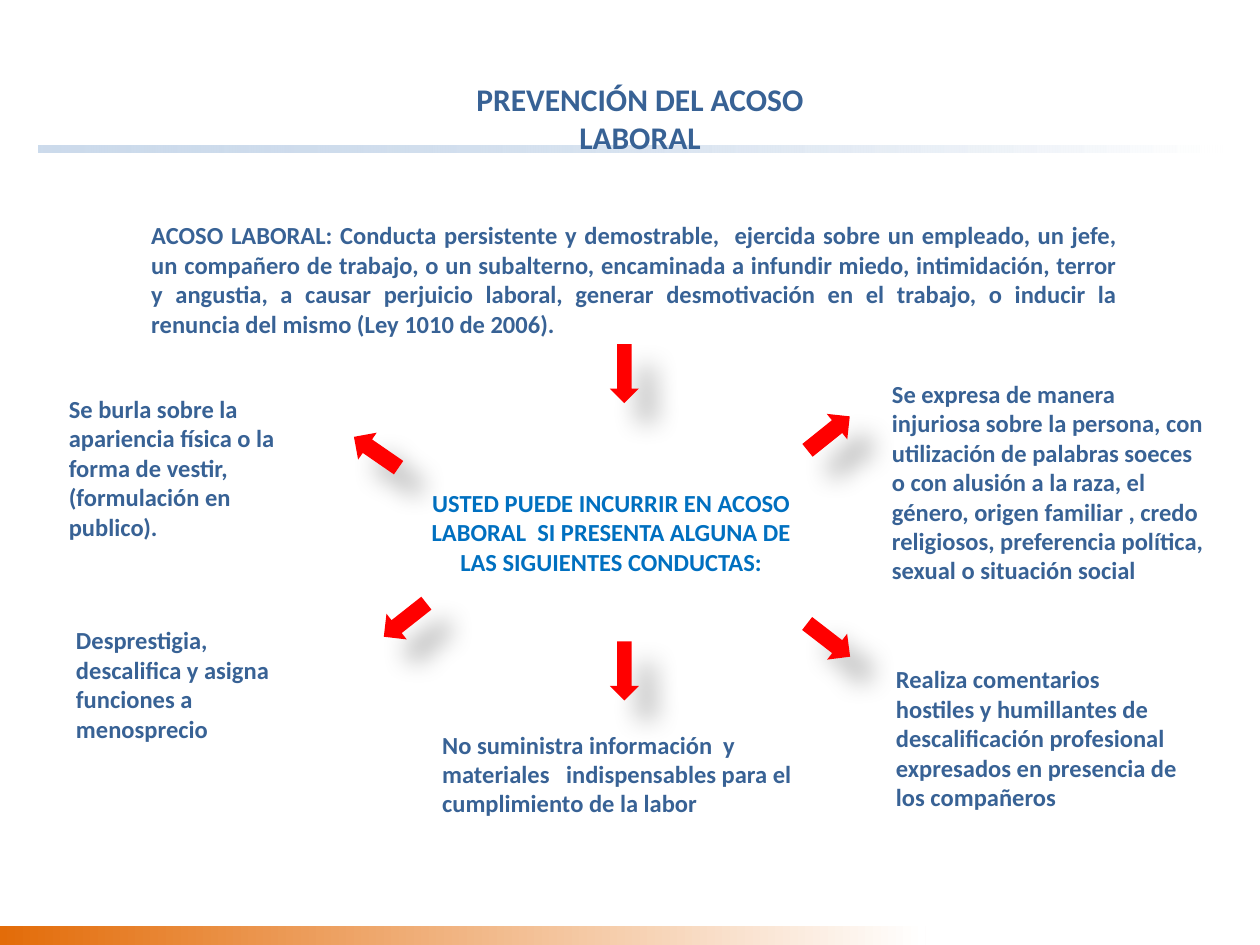
from dataclasses import dataclass

from lxml.etree import SubElement
from pptx import Presentation
from pptx.dml.color import RGBColor
from pptx.enum.shapes import MSO_SHAPE as Preset
from pptx.enum.text import MSO_ANCHOR as Anchor, PP_ALIGN as Align
from pptx.oxml.ns import qn
from pptx.util import Pt


@dataclass(frozen=True)
class Theme:
    """Colours, font and type sizes of the slide."""
    text: str = "386295"
    accent: str = "0070C0"
    arrow: str = "FF0000"
    paper: str = "FFFFFF"
    rule: str = "9AB7D9"
    footer: str = "E36C09"
    shadow: str = "000000"
    font: str = "Calibri"
    title_size: int = 18
    body_size: int = 14


@dataclass(frozen=True)
class Box:
    """A rectangle in points."""
    left: float
    top: float
    width: float
    height: float

    def inner(self, left, top, width, height):
        """Return a box placed relative to this one."""
        return Box(self.left + left, self.top + top, width, height)


THEME = Theme()


def add_preset(slide, preset, box, color=None):
    """Add an unlined preset shape, filled if a colour is given."""
    lengths = (box.left, box.top, box.width, box.height)
    shape = slide.shapes.add_shape(preset, *map(Pt, lengths))
    shape.shadow.inherit = False
    shape.line.fill.background()
    if color:
        shape.fill.solid()
        shape.fill.fore_color.rgb = RGBColor.from_string(color)
    else:
        shape.fill.background()
    return shape


def add_fading_bar(slide, box, color, opacity=100):
    """Add a bar that fades from a colour to the paper, left to right."""
    shape = add_preset(slide, Preset.RECTANGLE, box)
    shape.fill.gradient()
    shape.fill.gradient_angle = 0
    for stop, stop_color in zip(shape.fill.gradient_stops, (color, THEME.paper)):
        stop.color.rgb = RGBColor.from_string(stop_color)
    if opacity < 100:
        first_color = next(shape.element.spPr.iter(qn("a:srgbClr")))
        SubElement(first_color, qn("a:alpha"), val=str(opacity * 1000))


def add_text(slide, box, text, preset=Preset.ROUNDED_RECTANGLE, fill=THEME.paper,
             align=Align.LEFT, color=THEME.text, size=THEME.body_size):
    """Add a shape holding one bold paragraph."""
    shape = add_preset(slide, preset, box, fill)
    frame = shape.text_frame
    frame.word_wrap = True
    frame.vertical_anchor = Anchor.MIDDLE
    paragraph = frame.paragraphs[0]
    paragraph.text = text
    paragraph.alignment = align
    font = paragraph.font
    font.name, font.size, font.bold = THEME.font, Pt(size), True
    font.color.rgb = RGBColor.from_string(color)


def add_arrow(slide, preset, box, rotation=0):
    """Add a block arrow with a soft shadow to the lower right."""
    shape = add_preset(slide, preset, box, THEME.arrow)
    shape.rotation = rotation
    effects = shape.element.spPr.find(qn("a:effectLst"))
    shadow = SubElement(effects, qn("a:outerShdw"), blurRad=str(Pt(15)),
                        dist=str(Pt(18)), dir=str(45 * 60000), rotWithShape="0")
    color = SubElement(shadow, qn("a:srgbClr"), val=THEME.shadow)
    SubElement(color, qn("a:alpha"), val="30000")


def add_frame(slide, box):
    """Place the rule below the title and the bar at the foot."""
    add_fading_bar(slide, box.inner(22.3, 83.3, 676, 4), THEME.rule, 50)
    add_fading_bar(slide, box.inner(0, box.height - 10.8, 529, 10.8), THEME.footer)


def add_title(slide, box):
    """Place the title in its ellipse."""
    add_text(slide, box, "PREVENCIÓN DEL ACOSO LABORAL", Preset.OVAL, None,
             Align.CENTER, size=THEME.title_size)


def add_definition(slide, box):
    """Place the definition and the arrow that leads down from it."""
    add_text(slide, box.inner(0, 0, box.width, 62.6),
             "ACOSO LABORAL: Conducta persistente y demostrable,  ejercida sobre un "
             "empleado, un jefe, un compañero de trabajo, o un subalterno, encaminada a "
             "infundir miedo, intimidación, terror y angustia, a causar perjuicio laboral, "
             "generar desmotivación en el trabajo, o inducir la renuncia del mismo "
             "(Ley 1010 de 2006).", align=Align.JUSTIFY)
    add_arrow(slide, Preset.DOWN_ARROW, box.inner(272.2, 68.4, 16.6, 33.8))


def add_conducts(slide, box):
    """Place the central statement, the conducts around it and their arrows."""
    add_text(slide, box.inner(203.1, 73.5, 236.2, 56.2),
             "USTED PUEDE INCURRIR EN ACOSO LABORAL  SI PRESENTA ALGUNA DE LAS "
             "SIGUIENTES CONDUCTAS:", align=Align.CENTER, color=THEME.accent)
    conducts = (
        ((213.9, 203.1, 236.2, 73.4),
         "No suministra información  y materiales   indispensables para el "
         "cumplimiento de la labor"),
        ((5.8, 163.5, 157.7, 50.4),
         "Desprestigia, descalifica y asigna funciones a menosprecio"),
        ((472.4, 174.3, 185.8, 90),
         "Realiza comentarios hostiles y humillantes de descalificación profesional "
         "expresados en presencia de los compañeros"),
        ((467.4, 0, 208, 146.2),
         "Se expresa de manera injuriosa sobre la persona, con utilización de palabras "
         "soeces o con alusión a la raza, el género, origen familiar , credo "
         "religiosos, preferencia política, sexual o situación social"),
        ((0, 22.3, 157.7, 85),
         "Se burla sobre la apariencia física o la forma de vestir, (formulación en "
         "publico)."),
    )
    for place, text in conducts:
        add_text(slide, box.inner(*place), text)
    diagonals = ((171.4, 46.8, 34.6), (429.9, 154.1, 217.7),
                 (429.9, 36, 141.2), (187.9, 142.6, 321.7))
    for left, top, rotation in diagonals:
        add_arrow(slide, Preset.LEFT_ARROW, box.inner(left, top, 31, 18.7), rotation)
    add_arrow(slide, Preset.DOWN_ARROW, box.inner(320.4, 164.2, 16.6, 33.8))


def main():
    """Build and save the slide."""
    presentation = Presentation()
    page = Box(0, 0, 720, 540)
    presentation.slide_width, presentation.slide_height = Pt(page.width), Pt(page.height)
    slide = presentation.slides.add_slide(presentation.slide_layouts[6])
    add_frame(slide, page)
    add_title(slide, page.inner(191.5, 16.6, 348.5, 101.5))
    add_definition(slide, page.inner(76.3, 128.2, 572.4, 102.2))
    add_conducts(slide, page.inner(28.1, 202.3, 675.4, 276.5))
    presentation.save("out.pptx")


if __name__ == "__main__":
    main()
